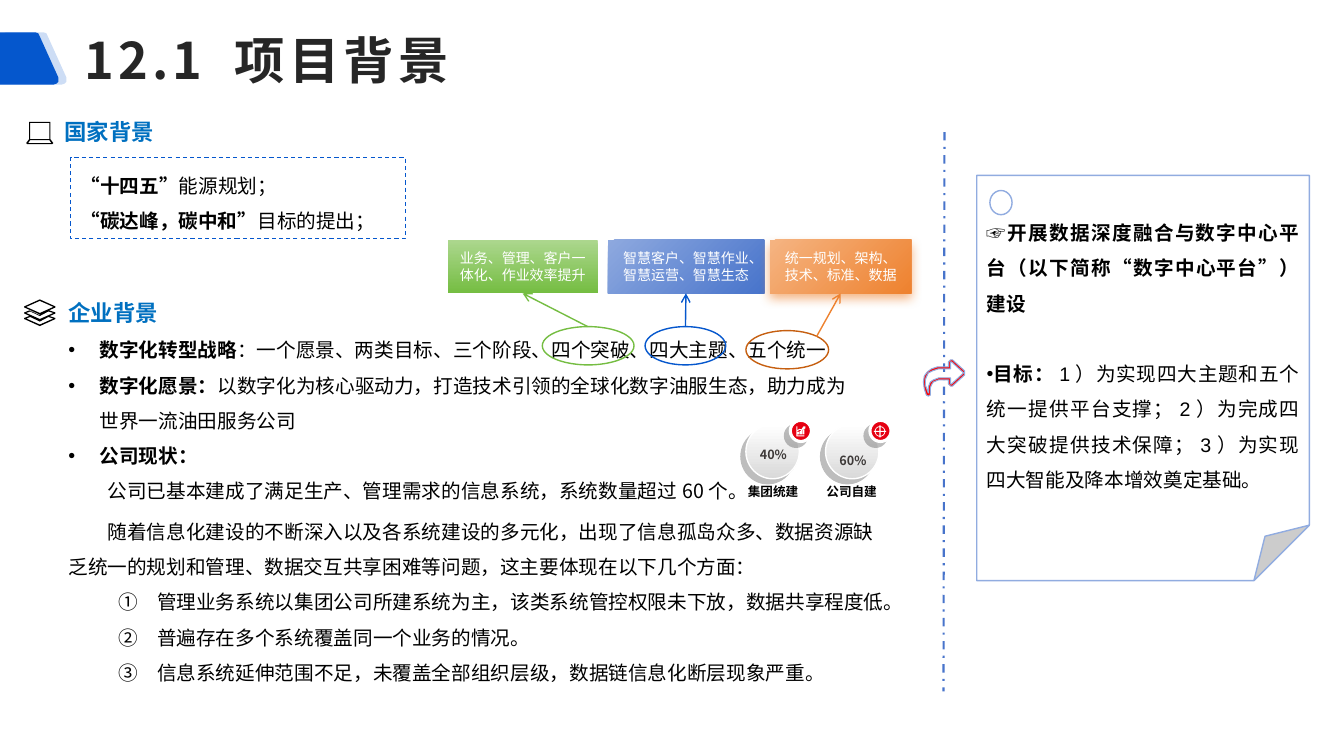
import math

import pptx
import pptx.dml.color
import pptx.enum.dml
import pptx.enum.shapes
import pptx.enum.text
import pptx.oxml
import pptx.oxml.ns
import pptx.util
from lxml import etree

CELL = 91440
COLS, ROWS = 133.33, 75
HUE = {"blue": "0557CD", "head": "0070C0", "title": "262626", "ink": "000000",
       "white": "FFFFFF", "red": "E60012", "arrow": "FF0000", "grey": "D9D9D9",
       "number": "3E3A39", "pale": "91ACE0", "rule": "4874CB", "sky": "8EA9DF",
       "green": "75BD42", "lime": "ACD78E", "orange": "EE822F", "peach": "F5B482",
       "rust": "C65F10"}
NOTO, ARIAL = "Noto Sans CJK SC", "Arial"
KIND = pptx.enum.shapes.MSO_SHAPE
DASH = pptx.enum.dml.MSO_LINE
SIDE = pptx.enum.text.PP_ALIGN
MID, TOP = pptx.enum.text.MSO_ANCHOR.MIDDLE, pptx.enum.text.MSO_ANCHOR.TOP
qn = pptx.oxml.ns.qn


def rgb(name):
    """Look up a colour by name."""
    return pptx.dml.color.RGBColor.from_string(HUE[name])


def grid(*cells):
    """Turn grid cells into slide lengths."""
    return [round(cell * CELL) for cell in cells]


def style(shape, fill=None, line=None, width=1, dash=None, angle=0):
    """Set the fill, plain or graded, and the outline."""
    shape.shadow.inherit = False
    if isinstance(fill, tuple):
        shape.fill.gradient()
        shape.fill.gradient_angle = angle
        for stop, name in zip(shape.fill.gradient_stops, fill):
            stop.color.rgb = rgb(name)
    elif fill:
        shape.fill.solid()
        shape.fill.fore_color.rgb = rgb(fill)
    else:
        shape.fill.background()
    if line:
        shape.line.color.rgb = rgb(line)
        shape.line.width = pptx.util.Pt(width)
        shape.line.dash_style = dash
    else:
        shape.line.fill.background()
    return shape


def form(page, kind, box, at, **look):
    """Add a preset shape at an offset inside a box."""
    x, y, w, h = at
    shape = page.shapes.add_shape(kind, *grid(box[0] + x, box[1] + y, w, h))
    return style(shape, **look)


def trace(page, box, at, loops, **look):
    """Draw closed loops as one freeform."""
    x, y = box[0] + at[0], box[1] + at[1]
    loops = [[grid(x + a, y + b) for a, b in loop] for loop in loops]
    pen = page.shapes.build_freeform(*loops[0][0], scale=1.0)
    for turn, loop in enumerate(loops):
        if turn:
            pen.move_to(*loop[0])
        pen.add_line_segments(loop[1:], close=True)
    return style(pen.convert_to_shape(), **look)


def shade(shape, name, alpha, blur, dist, angle):
    """Cast an outer shadow."""
    glow = shape._element.spPr.find(qn("a:effectLst"))
    cast = etree.SubElement(glow, qn("a:outerShdw"), blurRad=str(blur * 12700),
                            dist=str(dist * 12700), dir=str(angle * 60000), rotWithShape="0")
    tint = etree.SubElement(cast, qn("a:srgbClr"), val=HUE[name])
    etree.SubElement(tint, qn("a:alpha"), val=str(alpha * 1000))


def write(frame, paras, size=14, tint="ink", face=NOTO, side=SIDE.LEFT, anchor=TOP,
          lead=1.5, gap=0):
    """Fill a frame; each paragraph is (runs, bullet, margin, indent)."""
    frame.word_wrap, frame.vertical_anchor = True, anchor
    for turn, (runs, mark, margin, indent) in enumerate(paras):
        para = frame.add_paragraph() if turn else frame.paragraphs[0]
        para.alignment, para.line_spacing = side, lead
        if turn and gap:
            para.space_before = pptx.util.Pt(gap)
        props = para._p.get_or_add_pPr()
        props.set("marL", str(grid(margin)[0]))
        props.set("indent", str(grid(indent)[0]))
        if mark == "•":
            etree.SubElement(props, qn("a:buFont"), typeface=ARIAL)
            etree.SubElement(props, qn("a:buChar"), char=mark)
        elif mark:
            para.level = 1
            etree.SubElement(props, qn("a:buAutoNum"), type=mark)
        for text, bold in runs:
            run = para.add_run()
            run.text = text
            run.font.size, run.font.bold = pptx.util.Pt(size), bold
            run.font.color.rgb, run.font.name = rgb(tint), face
            etree.SubElement(run._r.get_or_add_rPr(), qn("a:ea"), typeface=NOTO)


def note(page, box, at, paras, **look):
    """Add a text box at an offset inside a box."""
    x, y, w, h = at
    area = page.shapes.add_textbox(*grid(box[0] + x, box[1] + y, w, h))
    write(area.text_frame, paras, **look)
    return area


def plain(text, bold=False):
    """Make a one-run paragraph without a bullet."""
    return [(text, bold)], None, 0, 0


def wire(page, start, end, tint, width=1):
    """Add a straight line."""
    line = page.shapes.add_connector(pptx.enum.shapes.MSO_CONNECTOR.STRAIGHT,
                                     *grid(*start, *end))
    line.line.color.rgb, line.line.width = rgb(tint), pptx.util.Pt(width)
    etree.SubElement(line._element.spPr, qn("a:effectLst"))
    return line


def banner(page, box):
    """Draw the title and its slanted tabs."""
    slab = [(0.1, 4.5), (1.9, 0.3), (2.1, 0.1), (2.3, 0), (6, 0), (6.3, 0.1), (6.4, 0.3),
            (8.3, 4.5), (8.3, 4.9), (8.1, 5.1), (7.8, 5.2), (0.5, 5.2), (0.2, 5.1), (0, 4.9)]
    back = trace(page, box, (-1.7, 2.3), [slab], fill="blue")
    tint = back._element.spPr.find(qn("a:solidFill"))[0]
    etree.SubElement(tint, qn("a:alpha"), val="20000")
    trace(page, box, (-2.5, 2.3), [slab], fill="blue")
    name = note(page, box, (7.4, 0, box[2] - 7.4, box[3]), [plain("12.1 项目背景", True)],
                size=36, tint="title", anchor=MID, lead=1)
    name.text_frame.paragraphs[0].runs[0]._r.rPr.set("spc", "300")


def nation(page, box):
    """Place the national background."""
    note(page, box, (5.4, 0, 91.5, 5), [plain("国家背景", True)], size=16, tint="head")
    trace(page, box, (2.6, 2.2), [
        [(0.3, 0), (2.4, 0), (2.4, 1.7), (2.7, 2.1), (2.6, 2.2), (0.1, 2.2), (0, 2.1), (0.3, 1.7)],
        [(0.4, 0.1), (2.3, 0.1), (2.3, 1.7), (0.4, 1.7)],
        [(0.4, 1.8), (2.3, 1.8), (2.5, 2.1), (0.2, 2.1)]], fill="ink")
    card = form(page, KIND.RECTANGLE, box, (7, 5.7, 33.2, 8.1), line="blue", width=0.75,
                dash=DASH.DASH)
    write(card.text_frame, [([("“十四五”", True), ("能源规划；", False)], None, 0, 0),
                            ([("“碳达峰，碳中和”", True), ("目标的提出；", False)], None, 0, 0)])


def firm(page, box):
    """Place the company background."""
    points = [("数字化转型战略", "：一个愿景、两类目标、三个阶段、四个突破、四大主题、五个统一"),
              ("数字化愿景：", "以数字化为核心驱动力，打造技术引领的全球化数字油服生态，助力成为世界一流油田服务公司"),
              ("公司现状：", "")]
    paras = [([(head, True)] + [(rest, False)] * bool(rest), "•", 3.1, -3.1)
             for head, rest in points]
    paras.append(([("公司已基本建成了满足生产、管理需求的信息系统，系统数量超过60个。", False)], None, 0, 3.9))
    area = note(page, box, (5.8, 0, 80.9, 22.7), [plain("企业背景", True)] + paras)
    top = area.text_frame.paragraphs[0].runs[0].font
    top.size, top.color.rgb = pptx.util.Pt(16), rgb("head")
    issues = ["管理业务系统以集团公司所建系统为主，该类系统管控权限未下放，数据共享程度低。",
              "普遍存在多个系统覆盖同一个业务的情况。",
              "信息系统延伸范围不足，未覆盖全部组织层级，数据链信息化断层现象严重。"]
    intro = ("随着信息化建设的不断深入以及各系统建设的多元化，出现了信息孤岛众多、数据资源缺乏"
             "统一的规划和管理、数据交互共享困难等问题，这主要体现在以下几个方面：")
    note(page, box, (5.8, 22, 83.2, 18.7), [([(intro, False)], None, 0, 3.9)]
         + [([(text, False)], "circleNumDbPlain", 8.8, -3.8) for text in issues])
    wing = [(0, 0.7), (0.5, 0.5), (1.5, 0.95), (2.5, 0.5), (3.1, 0.7), (3.1, 0.8),
            (1.55, 1.5), (0, 0.8)]
    fold = [(0.2, 0.75), (0.6, 0.6), (1.55, 1.05), (2.4, 0.6), (2.9, 0.75), (1.55, 1.35)]
    loops = [[(0, 0.7), (1.55, 0), (3.1, 0.7), (3.1, 0.8), (1.55, 1.5), (0, 0.8)],
             [(0.2, 0.75), (1.55, 0.15), (2.9, 0.75), (1.55, 1.35)]]
    loops += [[(a, b + drop) for a, b in loop] for drop in (0.6, 1.15) for loop in (wing, fold)]
    trace(page, box, (2.4, 1.8), loops, fill="ink")


def themes(page, box):
    """Place the three cards and the rings that point to them."""
    oval, node = KIND.OVAL, KIND.FLOWCHART_CONNECTOR
    rows = [(0, 14.9, "业务、管理、客户一体化、作业效率提升", ("lime", "green"), 270,
             oval, (9.4, 8.6, 9.1, 3.8), "green", "green", (13.9, 8.6)),
            (15.9, 15.5, "智慧客户、智慧作业、智慧运营、智慧生态", ("sky", "rule"), 315,
             node, (19.6, 8.6, 8, 3.8), "blue", "blue", (23.6, 8.6)),
            (32, 14, "统一规划、架构、技术、标准、数据", ("peach", "orange"), 315,
             oval, (29.6, 9, 8.2, 3.8), "rust", "orange", (36.6, 9.6))]
    for x, w, text, fill, angle, kind, ring, edge, tint, (a, b) in rows:
        card = form(page, KIND.RECTANGLE, box, (x, 0, w, 5.3), fill=fill, angle=angle)
        if tint == "orange":
            shade(card, tint, 60, 8, 4, 90)
        write(card.text_frame, [plain(text)], size=10, tint="white", face=ARIAL,
              side=SIDE.CENTER, anchor=MID, lead=1)
        form(page, kind, box, ring, line=edge)
        start = box[0] + a, box[1] + b
        line = wire(page, start, start, tint)
        line.end_connect(card, 2)
        etree.SubElement(line.line._get_or_add_ln(), qn("a:tailEnd"), type="arrow")


def arc(x, y, size, start, end):
    """List the points of an arc in degrees."""
    return [(x + size * math.cos(math.radians(d)), y + size * math.sin(math.radians(d)))
            for d in range(start, end + 1, 15)]


def stats(page, box):
    """Place the two share dials."""
    bars = [[(0, 0), (0.1, 0), (0.1, 0.9), (0.8, 0.9), (0.8, 1), (0, 1)],
            [(0.1, 0.4), (0.3, 0.25), (0.5, 0.3), (0.7, 0), (0.9, 0), (0.9, 0.2), (0.5, 0.4),
             (0.3, 0.35), (0.1, 0.5)]]
    bars += [[(x, y), (x + 0.2, y - 0.1), (x + 0.2, 0.8), (x, 0.8)]
             for x, y in ((0.1, 0.6), (0.35, 0.5), (0.6, 0.4))]
    aim = [arc(0.6, 0.6, 0.52, 0, 345)]
    aim += [[(0.6 + a, 0.6 + b)] + arc(0.6 + a, 0.6 + b, 0.38, turn, turn + 90)
            for a, b, turn in ((0.05, 0.05, 0), (-0.05, 0.05, 90), (-0.05, -0.05, 180),
                               (0.05, -0.05, 270))]
    aim += [[(x, y), (x + w, y), (x + w, y + h), (x, y + h)] for x, y, w, h in (
        (0.55, 0, 0.1, 0.08), (0.55, 1.12, 0.1, 0.08), (0, 0.55, 0.08, 0.1),
        (1.12, 0.55, 0.08, 0.1))]
    rows = [("40%", 2.1, "集团统建", -0.8, bars, (5, 0.6)),
            ("60%", 2.7, "公司自建", -0.9, aim, (4.8, 0.5))]
    for turn, (share, drop, label, shift, icon, spot) in enumerate(rows):
        part = box[0] + 7.9 * turn, box[1]
        dial = form(page, KIND.OVAL, part, (0, 0.4, 5.3, 5.4), fill=("white", "grey"),
                    angle=270, line="white")
        badge = form(page, KIND.OVAL, part, (4.4, 0, 2.1, 2.1), fill="red", line="white",
                     width=2.25)
        for disc in (dial, badge):
            shade(disc, "ink", 25, 0, 5, 135)
        trace(page, part, spot, icon, fill="white")
        note(page, part, (0.4, drop, 5, 2.4), [plain(share, True)], size=9, tint="number", lead=1)
        note(page, part, (shift, 5.8, 7.8, 2.5), [plain(label, True)], size=9, face=ARIAL, lead=1)


def goal(page, box):
    """Place the divider, the arrow and the goal sheet."""
    x, y = box[:2]
    sheet = form(page, KIND.FOLDED_CORNER, box, (5.9, 4.3, 33, 40.2), fill="white", line="pale")
    task = [("☞", False), ("开展数据深度融合与数字中心平台（以下简称“数字中心平台”）建设", True)]
    aims = [("目标：", True), ("1）为实现四大主题和五个统一提供平台支撑；2）为完成四大突破提供技术保障；"
                            "3）为实现四大智能及降本增效奠定基础。", False)]
    write(sheet.text_frame, [(task, None, 0, 0), (aims, "•", 0, 0)], face=ARIAL,
          side=SIDE.JUSTIFY, anchor=MID, gap=25)
    rule = wire(page, (x + 2.7, y), (x + 2.6, y + 55.5), "rule", 1.5)
    rule.line.dash_style = DASH.DASH_DOT
    trace(page, box, (0.6, 22.6), [
        [(0.5, 3.6), (0.3, 3.5), (0.1, 2.9), (0, 2.2), (0.1, 1.6), (0.4, 1.2), (0.8, 0.9),
         (1.4, 0.7), (2.5, 0.7), (2.5, 0.2), (2.7, 0), (2.9, 0), (4.1, 1.1), (4.1, 1.5),
         (2.9, 2.6), (2.7, 2.6), (2.5, 2.4), (2.5, 2), (1.5, 2), (1, 2.2), (0.8, 2.5),
         (0.7, 2.8), (0.7, 3.5)],
        [(0.5, 3.3), (0.2, 2.5), (0.2, 2), (0.3, 1.7), (0.5, 1.3), (0.9, 1.1), (1.5, 0.9),
         (2.7, 0.9), (2.7, 0.2), (2.8, 0.2), (4, 1.3), (2.8, 2.4), (2.7, 2.4), (2.7, 1.8),
         (1.5, 1.8), (1, 2), (0.7, 2.2), (0.5, 2.7)]], fill="arrow", line="pale", width=0.75)
    form(page, KIND.OVAL, box, (7.2, 5.8, 2.2, 2.4), line="pale")


def main():
    """Build and save the slide."""
    deck = pptx.Presentation()
    deck.slide_width, deck.slide_height = grid(COLS, ROWS)
    page = deck.slides.add_slide(deck.slide_layouts[6])
    banner(page, (0, 0.9, COLS, 10))
    nation(page, (0, 9.9, 93, 14))
    firm(page, (0, 27.9, 93, 41))
    stats(page, (74, 41.7, 15, 8.3))
    themes(page, (44.4, 23.8, 46, 13))
    goal(page, (91, 13.1, 39, 56))
    deck.save("out.pptx")


if __name__ == "__main__":
    main()
